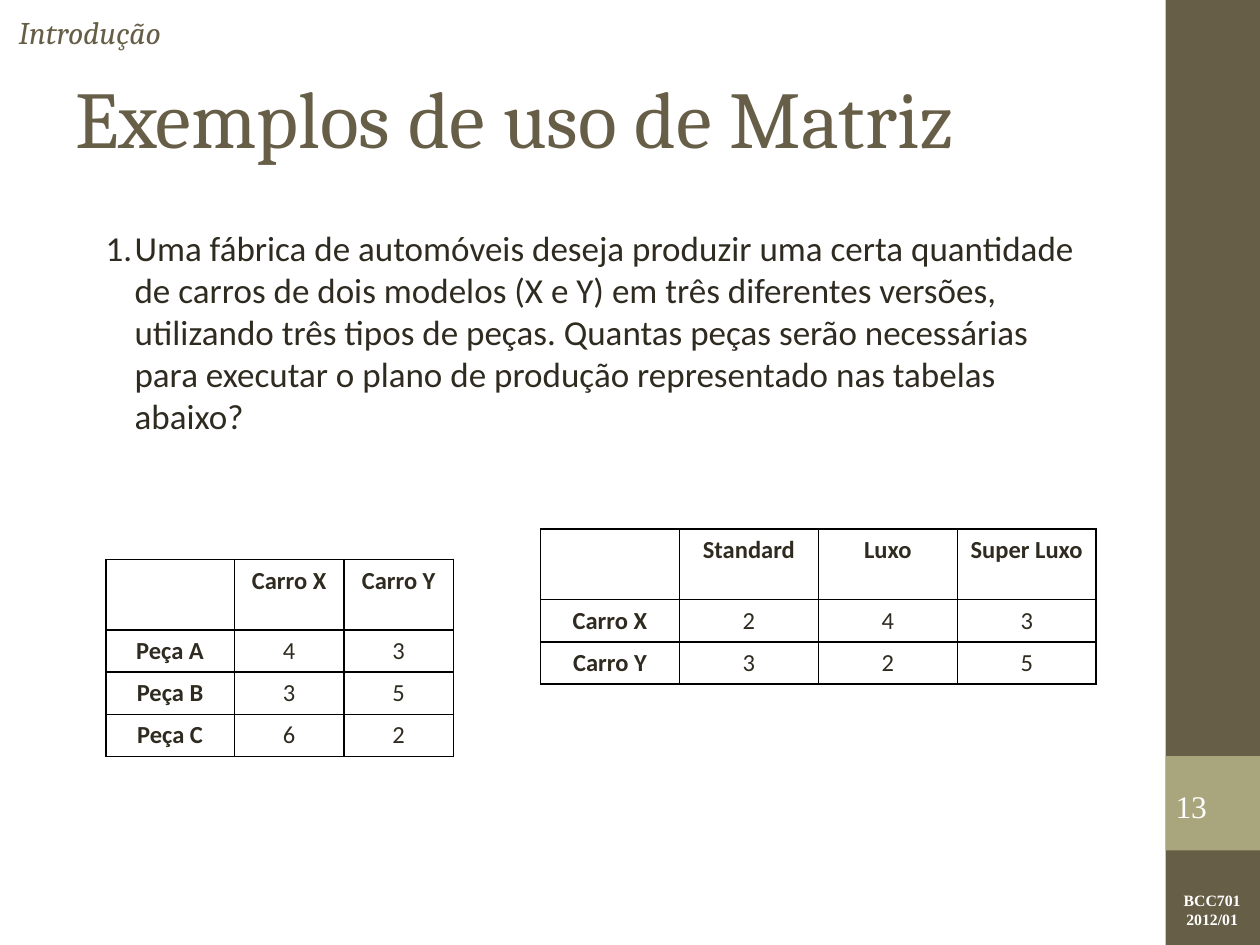
import dataclasses

import pptx
import pptx.dml.color
import pptx.enum.shapes
import pptx.enum.text
import pptx.oxml
import pptx.oxml.ns
import pptx.util

GRID_COLUMNS, GRID_ROWS = 40, 30
SLIDE_WIDTH = pptx.util.Inches(10)
SLIDE_HEIGHT = pptx.util.Inches(7.5)
MIDDLE = pptx.enum.text.MSO_ANCHOR.MIDDLE
CENTER = pptx.enum.text.PP_ALIGN.CENTER


@dataclasses.dataclass(frozen=True)
class Theme:
    brown: str = "675E47"
    olive: str = "A9A57C"
    ink: str = "2F2B20"
    white: str = "FFFFFF"
    border: str = "000000"
    heading_font: str = "Cambria"
    body_font: str = "Calibri"
    rail_font: str = "Times New Roman"
    title_size: float = 46
    body_size: float = 20
    label_size: float = 18
    table_size: float = 14
    course_size: float = 9


THEME = Theme()


def across(columns):
    return int(SLIDE_WIDTH * columns / GRID_COLUMNS)


def down(rows):
    return int(SLIDE_HEIGHT * rows / GRID_ROWS)


def area(left, top, width, height):
    return across(left), down(top), across(width), down(height)


def rgb(color):
    return pptx.dml.color.RGBColor.from_string(color)


def write(frame, text, *, size, font, color, bold=False, italic=False,
          align=None, numbered=False):
    for index, line in enumerate(text.split("\n")):
        paragraph = frame.paragraphs[0] if index == 0 else frame.add_paragraph()
        paragraph.alignment = align
        if numbered:
            number_paragraph(paragraph)
        run = paragraph.add_run()
        run.text = line
        run.font.size = pptx.util.Pt(size)
        run.font.name = font
        run.font.color.rgb = rgb(color)
        run.font.bold = bold
        run.font.italic = italic


def number_paragraph(paragraph):
    properties = paragraph._p.get_or_add_pPr()
    properties.set("marL", str(pptx.util.Inches(0.47)))
    properties.set("indent", str(-pptx.util.Inches(0.23)))
    numbering = pptx.oxml.parse_xml(
        f'<a:buAutoNum {pptx.oxml.ns.nsdecls("a")} type="arabicPeriod"/>')
    properties.append(numbering)


def add_text(slide, place, text, anchor=None, inset=True, **text_format):
    frame = slide.shapes.add_textbox(*area(*place)).text_frame
    frame.word_wrap = True
    frame.vertical_anchor = anchor
    if not inset:
        frame.margin_left = frame.margin_right = 0
        frame.margin_top = frame.margin_bottom = 0
    write(frame, text, **text_format)


def add_block(slide, place, color):
    block = slide.shapes.add_shape(
        pptx.enum.shapes.MSO_SHAPE.RECTANGLE, *area(*place))
    block.shadow.inherit = False
    block.fill.solid()
    block.fill.fore_color.rgb = rgb(color)
    block.line.fill.background()


def outline_cell(cell):
    properties = cell._tc.get_or_add_tcPr()
    for position, side in enumerate(("lnL", "lnR", "lnT", "lnB")):
        border = pptx.oxml.parse_xml(
            f'<a:{side} {pptx.oxml.ns.nsdecls("a")} w="{pptx.util.Pt(1)}">'
            f'<a:solidFill><a:srgbClr val="{THEME.border}"/></a:solidFill>'
            f'</a:{side}>')
        properties.insert(position, border)


def add_matrix(slide, left, top, column_widths, records):
    row_heights = [2.24] + [1.34] * (len(records) - 1)
    place = area(left, top, sum(column_widths), sum(row_heights))
    matrix = slide.shapes.add_table(
        len(records), len(column_widths), *place).table
    for column, width in zip(matrix.columns, column_widths):
        column.width = across(width)
    for row, height in zip(matrix.rows, row_heights):
        row.height = down(height)
    for row_index, record in enumerate(records):
        for column_index, value in enumerate(record):
            cell = matrix.cell(row_index, column_index)
            cell.fill.background()
            cell.margin_left = cell.margin_right = pptx.util.Inches(0.07)
            outline_cell(cell)
            if value:
                write(cell.text_frame, value, size=THEME.table_size,
                      font=THEME.body_font, color=THEME.ink, align=CENTER,
                      bold=row_index == 0 or column_index == 0)


def add_rail(slide):
    add_block(slide, (37, 0, 3, 30), THEME.brown)
    add_block(slide, (37, 24, 3, 3), THEME.olive)
    add_text(slide, (37.04, 28.08, 2.88, 1.6), "BCC701\n2012/01",
             size=THEME.course_size, font=THEME.rail_font,
             color=THEME.white, bold=True, align=CENTER)
    add_text(slide, (37.32, 24.72, 2.4, 1.72), "13", anchor=MIDDLE,
             inset=False, size=THEME.label_size, font=THEME.rail_font,
             color=THEME.white)


def main():
    presentation = pptx.Presentation()
    presentation.slide_width = SLIDE_WIDTH
    presentation.slide_height = SLIDE_HEIGHT
    slide = presentation.slides.add_slide(presentation.slide_layouts[6])

    add_rail(slide)
    add_text(slide, (2, 1.2, 33.32, 5), "Exemplos de uso de Matriz",
             anchor=MIDDLE, size=THEME.title_size, font=THEME.heading_font,
             color=THEME.brown)
    add_text(slide, (2, 7, 33.32, 21),
             "Uma fábrica de automóveis deseja produzir uma certa quantidade "
             "de carros de dois modelos (X e Y) em três diferentes versões, "
             "utilizando três tipos de peças. Quantas peças serão necessárias "
             "para executar o plano de produção representado nas tabelas "
             "abaixo?",
             size=THEME.body_size, font=THEME.body_font, color=THEME.ink,
             numbered=True)
    add_text(slide, (0.2, 0.32, 33.28, 1.36), "Introdução", anchor=MIDDLE,
             size=THEME.label_size, font=THEME.heading_font,
             color=THEME.brown, italic=True)

    add_matrix(slide, 3.36, 17.76, [4.08, 3.48, 3.48], [
        ("", "Carro X", "Carro Y"),
        ("Peça A", "4", "3"),
        ("Peça B", "3", "5"),
        ("Peça C", "6", "2"),
    ])
    add_matrix(slide, 17.16, 16.8, [4.41] * 4, [
        ("", "Standard", "Luxo", "Super Luxo"),
        ("Carro X", "2", "4", "3"),
        ("Carro Y", "3", "2", "5"),
    ])
    presentation.save("out.pptx")


if __name__ == "__main__":
    main()
